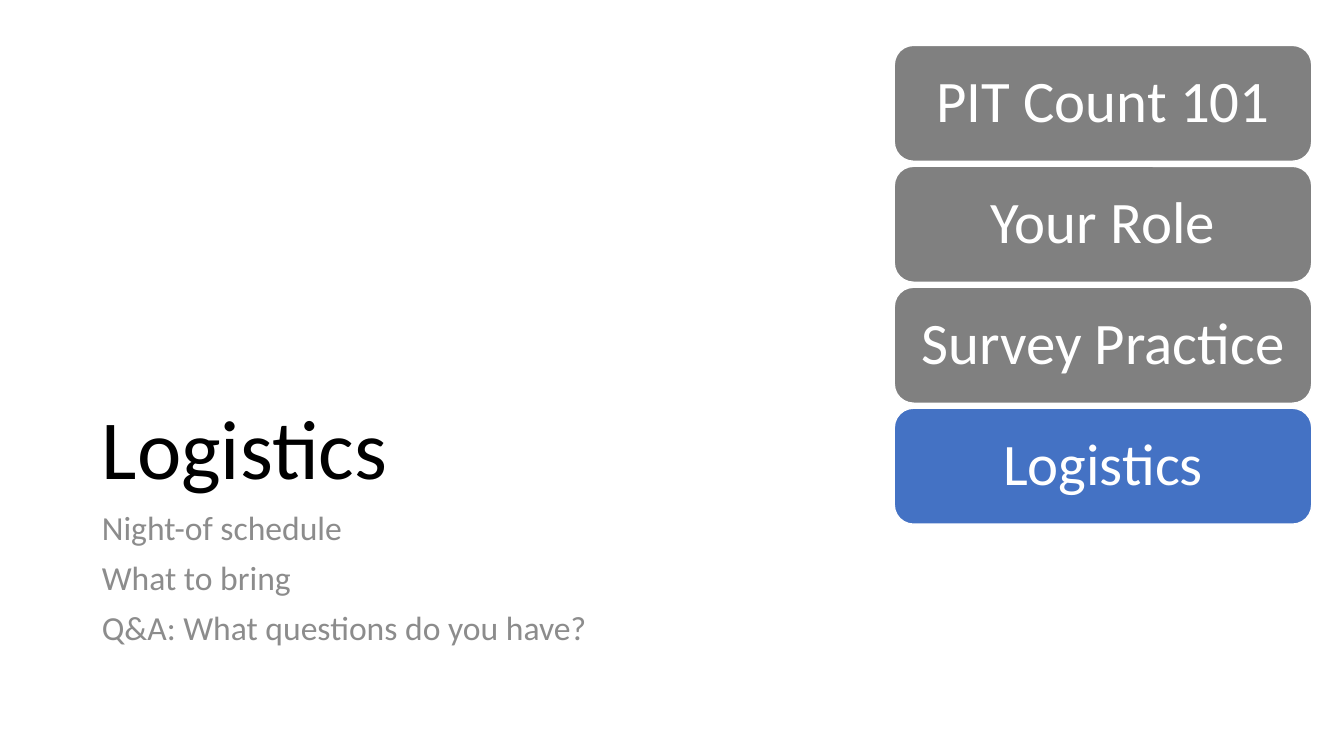
from pptx import Presentation
from pptx import util as u
from pptx.dml.color import RGBColor
from pptx.enum import shapes, text

HUES = {"ink": "000000", "note": "8C8C8C", "gray": "808080",
        "blue": "4472C4", "white": "FFFFFF"}


class Deck:
    font = "Calibri"

    def __init__(self):
        self.prs = Presentation()
        self.prs.slide_width = u.Inches(13.33)
        self.prs.slide_height = u.Inches(7.5)
        self.slide = self.prs.slides.add_slide(self.prs.slide_layouts[2])

    def hue(self, name):
        return RGBColor.from_string(HUES[name])

    def label(self, frame, lines, size, hue, align, anchor, before=0):
        frame.word_wrap = True
        frame.auto_size = text.MSO_AUTO_SIZE.NONE
        frame.vertical_anchor = anchor
        for i, line in enumerate(lines):
            para = frame.add_paragraph() if i else frame.paragraphs[0]
            para.alignment = align
            para.line_spacing = 0.9
            para.space_before = u.Pt(before)
            run = para.add_run()
            run.text = line
            run.font.name = self.font
            run.font.size = u.Pt(size)
            run.font.bold = False
            run.font.color.rgb = self.hue(hue)
            run._r.get_or_add_rPr().set("cap", "none")

    def holder(self, index, box, lines, size, hue, anchor, before=0):
        item = self.slide.placeholders[index]
        item.left, item.top, item.width, item.height = map(u.Inches, box)
        self.label(item.text_frame, lines, size, hue,
                   text.PP_ALIGN.LEFT, anchor, before)

    def button(self, box, line, fill):
        item = self.slide.shapes.add_shape(
            shapes.MSO_SHAPE.ROUNDED_RECTANGLE, *map(u.Inches, box))
        item.shadow.inherit = False
        item.fill.solid()
        item.fill.fore_color.rgb = self.hue(fill)
        item.line.color.rgb = self.hue("white")
        item.line.width = u.Pt(1)
        frame = item.text_frame
        frame.margin_left = frame.margin_right = u.Inches(0.17)
        frame.margin_top = frame.margin_bottom = u.Inches(0.09)
        self.label(frame, [line], 42, "white",
                   text.PP_ALIGN.CENTER, text.MSO_ANCHOR.MIDDLE)


def main():
    deck = Deck()
    topic = "Logistics"
    deck.holder(0, (0.91, 1.87, 11.5, 3.12), [topic], 60, "ink",
                text.MSO_ANCHOR.BOTTOM)
    points = ["Night-of schedule", "What to bring",
              "Q&A: What questions do you have?"]
    deck.holder(1, (0.91, 5.02, 11.5, 1.64), points, 24, "note",
                text.MSO_ANCHOR.TOP, 10)
    steps = ["PIT Count 101", "Your Role", "Survey Practice", topic]
    for i, step in enumerate(steps):
        deck.button((8.87, 0.45 + 1.2 * i, 4.14, 1.15), step,
                    "blue" if step == topic else "gray")
    deck.prs.save("out.pptx")


if __name__ == "__main__":
    main()
